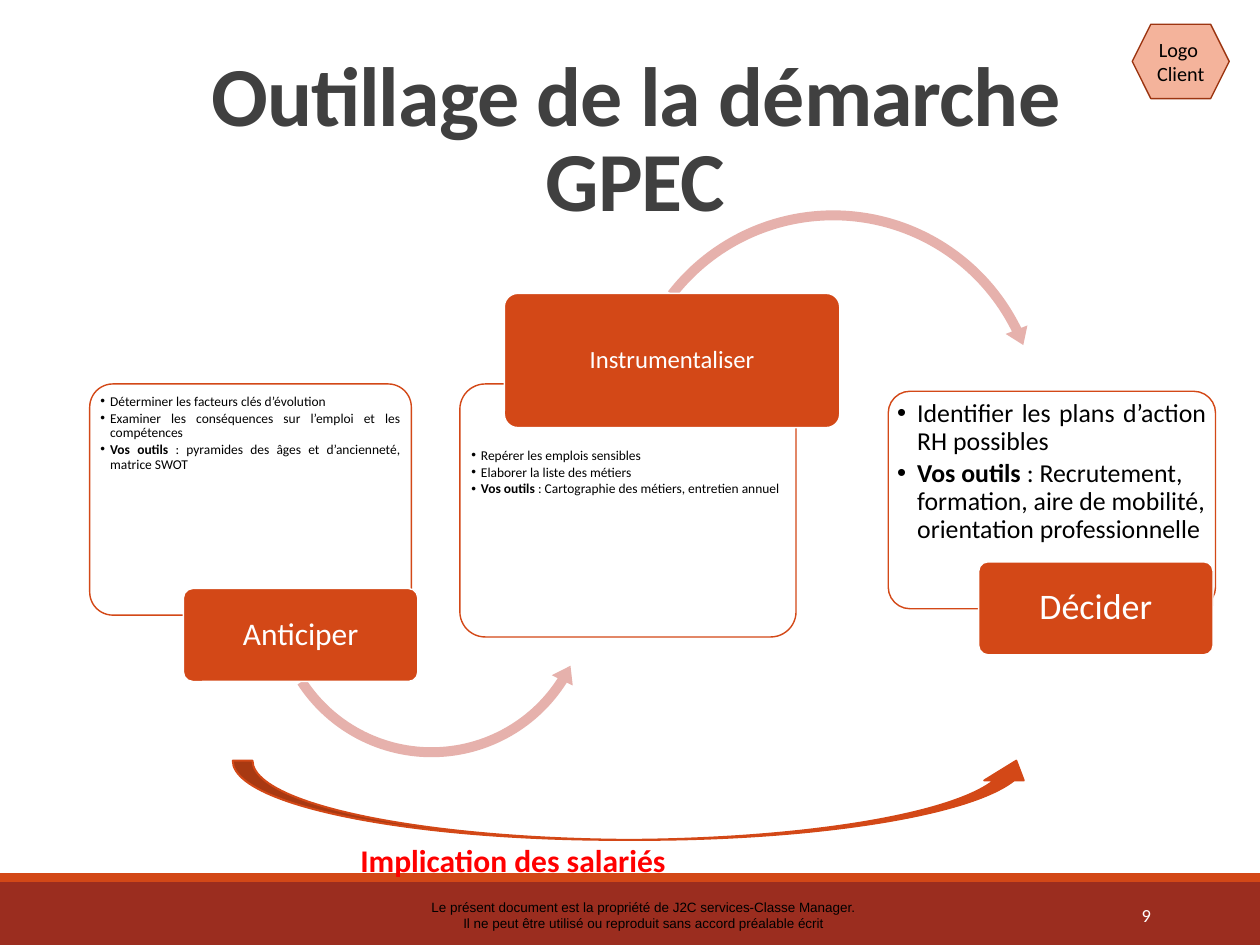
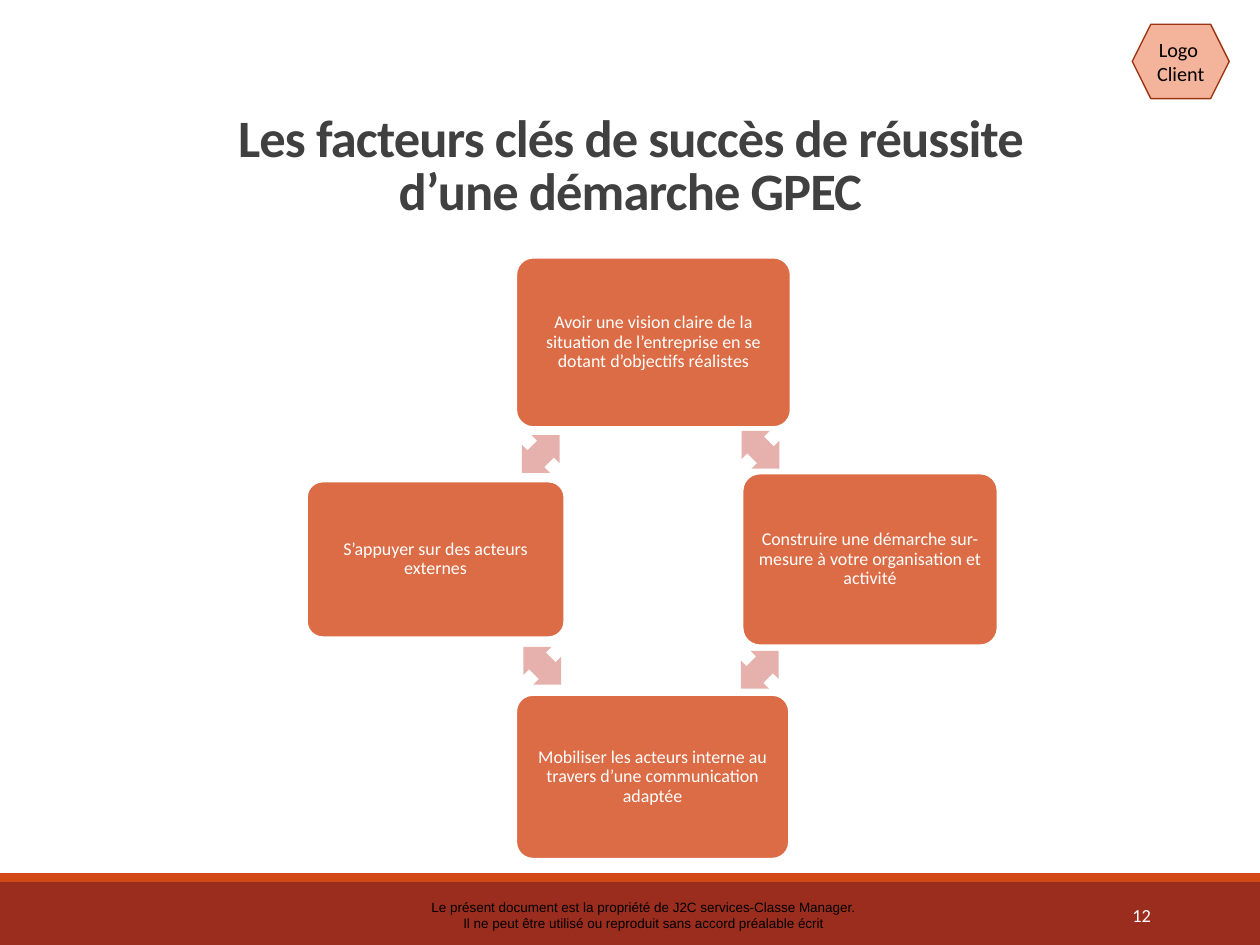
"""Build two workforce-planning slides with a shared band, footer and title style."""
from dataclasses import dataclass
from typing import NamedTuple, Optional

from lxml import etree
from pptx import Presentation
from pptx.dml.color import RGBColor
from pptx.enum.shapes import MSO_SHAPE
from pptx.enum.text import MSO_ANCHOR, PP_ALIGN
from pptx.oxml.ns import qn
from pptx.util import Emu, Pt

PX = 9144
PAGE_WIDTH, PAGE_HEIGHT = 1559, 1169

ORANGE = RGBColor(0xD3, 0x48, 0x17)
BRICK = RGBColor(0x9B, 0x2D, 0x1F)
PEACH = RGBColor(0xF4, 0xB3, 0x9B)
RUST = RGBColor(0x9C, 0x35, 0x11)
ROSE = RGBColor(0xE6, 0xB1, 0xAC)
CHARCOAL = RGBColor(0x40, 0x40, 0x40)
RED = RGBColor(0xFF, 0x00, 0x00)
BLACK = RGBColor(0x00, 0x00, 0x00)
WHITE = RGBColor(0xFF, 0xFF, 0xFF)

BODY_FONT, FOOTER_FONT = "Calibri", "Arial"
RECTANGLE, ROUNDED = MSO_SHAPE.RECTANGLE, MSO_SHAPE.ROUNDED_RECTANGLE
HEXAGON, DOUBLE_ARROW = MSO_SHAPE.HEXAGON, MSO_SHAPE.LEFT_RIGHT_ARROW
ARC_LEFT, ARC_RIGHT = MSO_SHAPE.LEFT_CIRCULAR_ARROW, MSO_SHAPE.CIRCULAR_ARROW
SWOOSH = MSO_SHAPE.CURVED_UP_ARROW
LEFT, CENTER, RIGHT = PP_ALIGN.LEFT, PP_ALIGN.CENTER, PP_ALIGN.RIGHT
JUSTIFY = PP_ALIGN.JUSTIFY
TOP, MIDDLE, BOTTOM = MSO_ANCHOR.TOP, MSO_ANCHOR.MIDDLE, MSO_ANCHOR.BOTTOM


class Area(NamedTuple):
    """Left, top, width and height in px."""
    left: int
    top: int
    width: int
    height: int


class Insets(NamedTuple):
    """Text margins in px."""
    left: int = 10
    top: int = 5
    right: int = 10
    bottom: int = 5


@dataclass(frozen=True)
class TextStyle:
    """Look shared by every paragraph of a box."""
    size: float
    color: RGBColor
    align: PP_ALIGN = CENTER
    anchor: MSO_ANCHOR = MIDDLE
    bold: bool = False
    font: str = BODY_FONT
    line_spacing: Optional[float] = None
    tracking: int = 0


@dataclass(frozen=True)
class Bullet:
    """A bulleted paragraph with an optional bold lead."""
    text: str
    lead: str = ""
    align: PP_ALIGN = LEFT


@dataclass(frozen=True)
class Arc:
    """A circular arrow, with widths in percent and angles in degrees."""
    preset: MSO_SHAPE
    area: Area
    thickness: float
    head_angle: float
    end_angle: float
    start_angle: float
    head_width: float


@dataclass(frozen=True)
class Step:
    """A card of bullets with its label and the arrow to the next step."""
    card: Area
    insets: Insets
    bullets: tuple[Bullet, ...]
    bullet_size: int
    hang: int
    label: str
    label_area: Area
    label_size: int
    arc: Optional[Arc] = None


class Factor(NamedTuple):
    """A success factor and its box."""
    text: str
    area: Area


class Link(NamedTuple):
    """Position and rotation of a double arrow."""
    left: int
    top: int
    rotation: int


STEPS = (
    Step(
        Area(111, 475, 398, 286), Insets(5, 5, 5, 5),
        (
            Bullet("Déterminer les facteurs clés d’évolution", align=JUSTIFY),
            Bullet("Examiner les conséquences sur l’emploi et les compétences", align=JUSTIFY),
            Bullet(": pyramides des âges et d’ancienneté, matrice SWOT", "Vos outils ", JUSTIFY),
        ),
        12, 12, "Anticiper", Area(227, 728, 290, 115), 28,
        Arc(ARC_LEFT, Area(328, 533, 412, 412), 3, 6.2, 32.4, 147, 3.5),
    ),
    Step(
        Area(569, 475, 416, 313), Insets(5, 71, 4, 5),
        (
            Bullet("Repérer les emplois sensibles"),
            Bullet("Elaborer la liste des métiers"),
            Bullet(": Cartographie des métiers, entretien annuel", "Vos outils "),
        ),
        12, 12, "Instrumentaliser", Area(624, 363, 415, 166), 22,
        Arc(ARC_RIGHT, Area(764, 252, 534, 534), 2.3, 4.7, 333.9, 217.8, 2.7),
    ),
    Step(
        Area(1099, 484, 405, 269), Insets(3, 3, 3, 3),
        (
            Bullet("Identifier les plans d’action RH possibles", align=JUSTIFY),
            Bullet(
                ": Recrutement, formation, aire de mobilité, orientation professionnelle",
                "Vos outils ",
            ),
        ),
        23, 25, "Décider", Area(1211, 695, 290, 115), 32,
    ),
)

FACTORS = (
    Factor(
        "Avoir une vision claire de la situation de l’entreprise en se dotant d’objectifs réalistes",
        Area(639, 319, 339, 209),
    ),
    Factor(
        "Construire une démarche sur-mesure à votre organisation et activité",
        Area(919, 586, 315, 212),
    ),
    Factor(
        "Mobiliser les acteurs interne au travers d’une communication adaptée",
        Area(639, 860, 337, 202),
    ),
    Factor("S’appuyer sur des acteurs externes", Area(380, 596, 318, 192)),
)
LINKS = (Link(908, 532, 45), Link(907, 804, 135), Link(638, 799, 225), Link(636, 537, 315))
LINK_WIDTH, LINK_HEIGHT = 66, 49


def emu(area: Area) -> list[Emu]:
    """Turn px into EMU."""
    return [Emu(length * PX) for length in area]


def add_box(page, preset, area: Area, fill: RGBColor, line: Optional[RGBColor] = None,
            line_width: float = 1.25, opacity: int = 100, adjustments=()):
    """Draw a preset shape without shadow."""
    box = page.shapes.add_shape(preset, *emu(area))
    box.shadow.inherit = False
    box.fill.solid()
    box.fill.fore_color.rgb = fill
    if opacity < 100:
        color = box._element.spPr.find(qn("a:solidFill")).find(qn("a:srgbClr"))
        etree.SubElement(color, qn("a:alpha")).set("val", str(opacity * 1000))
    if line is None:
        box.line.fill.background()
    else:
        box.line.color.rgb = line
        box.line.width = Pt(line_width)
    for index, value in enumerate(adjustments):
        box.adjustments[index] = value
    return box


def prepare_frame(box, anchor: MSO_ANCHOR, insets: Insets):
    """Set wrapping, anchor and margins of a box."""
    frame = box.text_frame
    frame.word_wrap = True
    frame.vertical_anchor = anchor
    (frame.margin_left, frame.margin_top,
     frame.margin_right, frame.margin_bottom) = emu(insets)
    return frame


def next_paragraph(frame, index: int):
    """Return the first paragraph or add another."""
    return frame.paragraphs[0] if index == 0 else frame.add_paragraph()


def set_font(para, style: TextStyle) -> None:
    """Apply a text style to a paragraph."""
    para.font.size = Pt(style.size)
    para.font.name = style.font
    para.font.color.rgb = style.color
    para.font.bold = style.bold
    if style.line_spacing:
        para.line_spacing = style.line_spacing


def write_lines(box, lines: tuple[str, ...], style: TextStyle, insets: Insets = Insets()) -> None:
    """Fill a box with plain paragraphs."""
    frame = prepare_frame(box, style.anchor, insets)
    for index, line in enumerate(lines):
        para = next_paragraph(frame, index)
        para.alignment = style.align
        span = para.add_run()
        span.text = line
        if style.tracking:
            span._r.get_or_add_rPr().set("spc", str(style.tracking))
        set_font(para, style)


def write_bullets(box, step: Step) -> None:
    """Fill a card with its bullets."""
    frame = prepare_frame(box, TOP, step.insets)
    style = TextStyle(step.bullet_size, BLACK, line_spacing=0.9)
    for index, bullet in enumerate(step.bullets):
        para = next_paragraph(frame, index)
        para.alignment = bullet.align
        properties = para._p.get_or_add_pPr()
        properties.set("marL", str(step.hang * PX))
        properties.set("indent", str(-step.hang * PX))
        etree.SubElement(properties, qn("a:buFont")).set("typeface", FOOTER_FONT)
        etree.SubElement(properties, qn("a:buChar")).set("char", "•")
        para.space_after = Pt(round(step.bullet_size * 0.18))
        if bullet.lead:
            lead = para.add_run()
            lead.text = bullet.lead
            lead.font.bold = True
        para.add_run().text = bullet.text
        set_font(para, style)


def add_text(page, area: Area, lines: tuple[str, ...], style: TextStyle,
             insets: Insets = Insets()) -> None:
    """Add a text box."""
    write_lines(page.shapes.add_textbox(*emu(area)), lines, style, insets)


def add_page(deck, title: str, title_area: Area, title_size: float, number: int):
    """Add a page with its bands, footer, client badge, title and number."""
    page = deck.slides.add_slide(deck.slide_layouts[6])
    add_box(page, RECTANGLE, Area(0, 1091, PAGE_WIDTH, 78), BRICK)
    add_box(page, RECTANGLE, Area(0, 1080, PAGE_WIDTH, 11), ORANGE)
    add_text(page, Area(503, 1103, 587, 60), (
        "Le présent document est la propriété de J2C services-Classe Manager.",
        "Il ne peut être utilisé ou reproduit sans accord préalable écrit",
    ), TextStyle(12, BLACK, anchor=TOP, font=FOOTER_FONT), Insets(19, 9, 19, 9))
    badge = add_box(page, HEXAGON, Area(1401, 30, 120, 92), PEACH, RUST)
    write_lines(badge, ("Logo ", "Client"), TextStyle(18, BLACK))
    add_text(page, title_area, (title,), TextStyle(
        title_size, CHARCOAL, anchor=BOTTOM, bold=True, line_spacing=0.85, tracking=-80))
    add_text(page, Area(1266, 1101, 168, 62), (str(number),), TextStyle(16.4, WHITE, RIGHT))
    return page


def add_arc(page, arc: Arc) -> None:
    """Draw a circular arrow."""
    angles = [angle * 0.6 for angle in (arc.head_angle, arc.end_angle, arc.start_angle)]
    add_box(page, arc.preset, arc.area, ROSE,
            adjustments=(arc.thickness / 100, *angles, arc.head_width / 100))


def add_step(page, step: Step) -> None:
    """Draw a card, its arrow and its label."""
    card = add_box(page, ROUNDED, step.card, WHITE, ORANGE, opacity=90, adjustments=(0.1,))
    write_bullets(card, step)
    if step.arc:
        add_arc(page, step.arc)
    label = add_box(page, ROUNDED, step.label_area, ORANGE, WHITE, adjustments=(0.1,))
    write_lines(label, (step.label,), TextStyle(step.label_size, WHITE, line_spacing=0.9))


def main() -> None:
    """Build and save the deck."""
    deck = Presentation()
    deck.slide_width, deck.slide_height = Emu(PAGE_WIDTH * PX), Emu(PAGE_HEIGHT * PX)

    page = add_page(deck, "Outillage de la démarche GPEC", Area(139, 106, 1294, 182), 74.8, 9)
    for step in STEPS:
        add_step(page, step)
    add_box(page, SWOOSH, Area(288, 941, 994, 98), ORANGE, ORANGE, 1.75)
    add_text(page, Area(436, 1036, 761, 57), ("Implication des salariés",),
             TextStyle(28.1, RED, LEFT, TOP, bold=True))

    page = add_page(deck, "Les facteurs clés de succès de réussite d’une démarche GPEC",
                    Area(262, 97, 1036, 182), 46.8, 12)
    for factor in FACTORS:
        box = add_box(page, ROUNDED, factor.area, ORANGE, WHITE, opacity=80, adjustments=(0.1,))
        write_lines(box, (factor.text,), TextStyle(16, WHITE, line_spacing=0.9), Insets(7, 7, 7, 7))
    for link in LINKS:
        arrow = add_box(page, DOUBLE_ARROW, Area(link.left, link.top, LINK_WIDTH, LINK_HEIGHT),
                        ROSE, adjustments=(0.6, 0.5))
        arrow.rotation = link.rotation

    deck.save("out.pptx")


if __name__ == "__main__":
    main()
